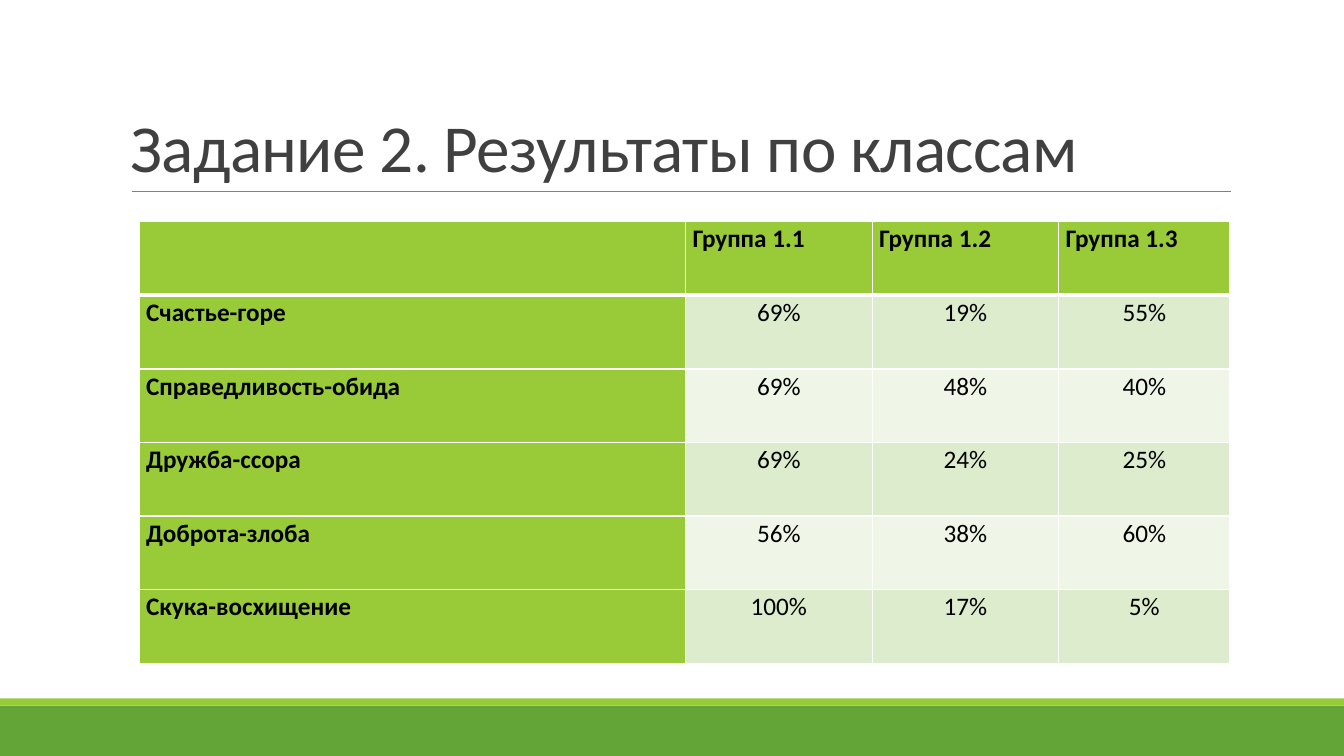
from lxml.etree import SubElement
from pptx import Presentation
from pptx.dml.color import RGBColor
from pptx.enum.shapes import MSO_CONNECTOR, MSO_SHAPE
from pptx.enum.text import MSO_ANCHOR, PP_ALIGN
from pptx.oxml.ns import qn
from pptx.util import Inches, Pt

# Content
TITLE = "Задание 2. Результаты по классам"
RESULTS = [
    ("", "Группа 1.1", "Группа 1.2", "Группа 1.3"),
    ("Счастье-горе", "69%", "19%", "55%"),
    ("Справедливость-обида", "69%", "48%", "40%"),
    ("Дружба-ссора", "69%", "24%", "25%"),
    ("Доброта-злоба", "56%", "38%", "60%"),
    ("Скука-восхищение", "100%", "17%", "5%"),
]
COLUMN_WIDTHS = [5.42, 1.85, 1.85, 1.7]
ROW_HEIGHT = 0.73
FOOTER_BANDS = [(7, 0.5, "63A537"), (6.93, 0.07, "99CB38")]  # top, height, colour
HEADING_FILL = "99CB38"
BAND_FILLS = ["EFF6E8", "DEECCE"]  # even rows, odd rows
FONT = "Calibri"


def color(value):
    return RGBColor.from_string(value)


def style_paragraph(paragraph, size, text_color, spacing, bold=False):
    paragraph.line_spacing = spacing
    font = paragraph.font
    font.name, font.size, font.bold = FONT, Pt(size), bold
    font.color.rgb = color(text_color)


def add_border(cell, side, width):
    line = SubElement(cell._tc.get_or_add_tcPr(), qn(f"a:ln{side}"), w=str(Pt(width)))
    fill = SubElement(line, qn("a:solidFill"))
    SubElement(fill, qn("a:srgbClr"), val="FFFFFF")


presentation = Presentation()
presentation.slide_width, presentation.slide_height = Inches(13.33), Inches(7.5)
slide = presentation.slides.add_slide(presentation.slide_layouts[6])

# Footer bands
for top, height, fill in FOOTER_BANDS:
    band = slide.shapes.add_shape(
        MSO_SHAPE.RECTANGLE, 0, Inches(top), presentation.slide_width, Inches(height))
    band.shadow.inherit = False
    band.fill.solid()
    band.fill.fore_color.rgb = color(fill)
    band.line.fill.background()

# Title and the rule under it
rule = slide.shapes.add_connector(
    MSO_CONNECTOR.STRAIGHT, Inches(1.31), Inches(1.9), Inches(12.21), Inches(1.9))
rule.line.color.rgb = color("808080")
rule.line.width = Pt(0.5)
SubElement(rule._element.spPr, qn("a:effectLst"))

title_box = slide.shapes.add_textbox(Inches(1.2), Inches(0.31), Inches(11), Inches(1.59))
title_frame = title_box.text_frame
title_frame.word_wrap = True
title_frame.vertical_anchor = MSO_ANCHOR.BOTTOM
title_frame.text = TITLE
title = title_frame.paragraphs[0]
style_paragraph(title, 48, "404040", 0.85)
title.runs[0]._r.get_or_add_rPr().set("spc", "-50")

# Results table
table = slide.shapes.add_table(
    len(RESULTS), len(COLUMN_WIDTHS), Inches(1.38), Inches(2.2),
    Inches(sum(COLUMN_WIDTHS)), Inches(ROW_HEIGHT * len(RESULTS))).table
for column, width in zip(table.columns, COLUMN_WIDTHS):
    column.width = Inches(width)

for row_index, values in enumerate(RESULTS):
    table.rows[row_index].height = Inches(ROW_HEIGHT)
    for column_index, value in enumerate(values):
        cell = table.cell(row_index, column_index)
        is_heading = row_index == 0 or column_index == 0
        cell.margin_left = cell.margin_right = Inches(0.07)
        cell.margin_top = cell.margin_bottom = 0
        # The line between the header and the body is thicker
        add_border(cell, "L", 1)
        add_border(cell, "R", 1)
        add_border(cell, "T", 3 if row_index == 1 else 1)
        add_border(cell, "B", 3 if row_index == 0 else 1)
        cell.fill.solid()
        cell.fill.fore_color.rgb = color(
            HEADING_FILL if is_heading else BAND_FILLS[row_index % 2])
        cell.text = value
        paragraph = cell.text_frame.paragraphs[0]
        paragraph.alignment = PP_ALIGN.JUSTIFY if is_heading else PP_ALIGN.CENTER
        style_paragraph(paragraph, 18, "000000", 1.07, is_heading)

presentation.save("out.pptx")
